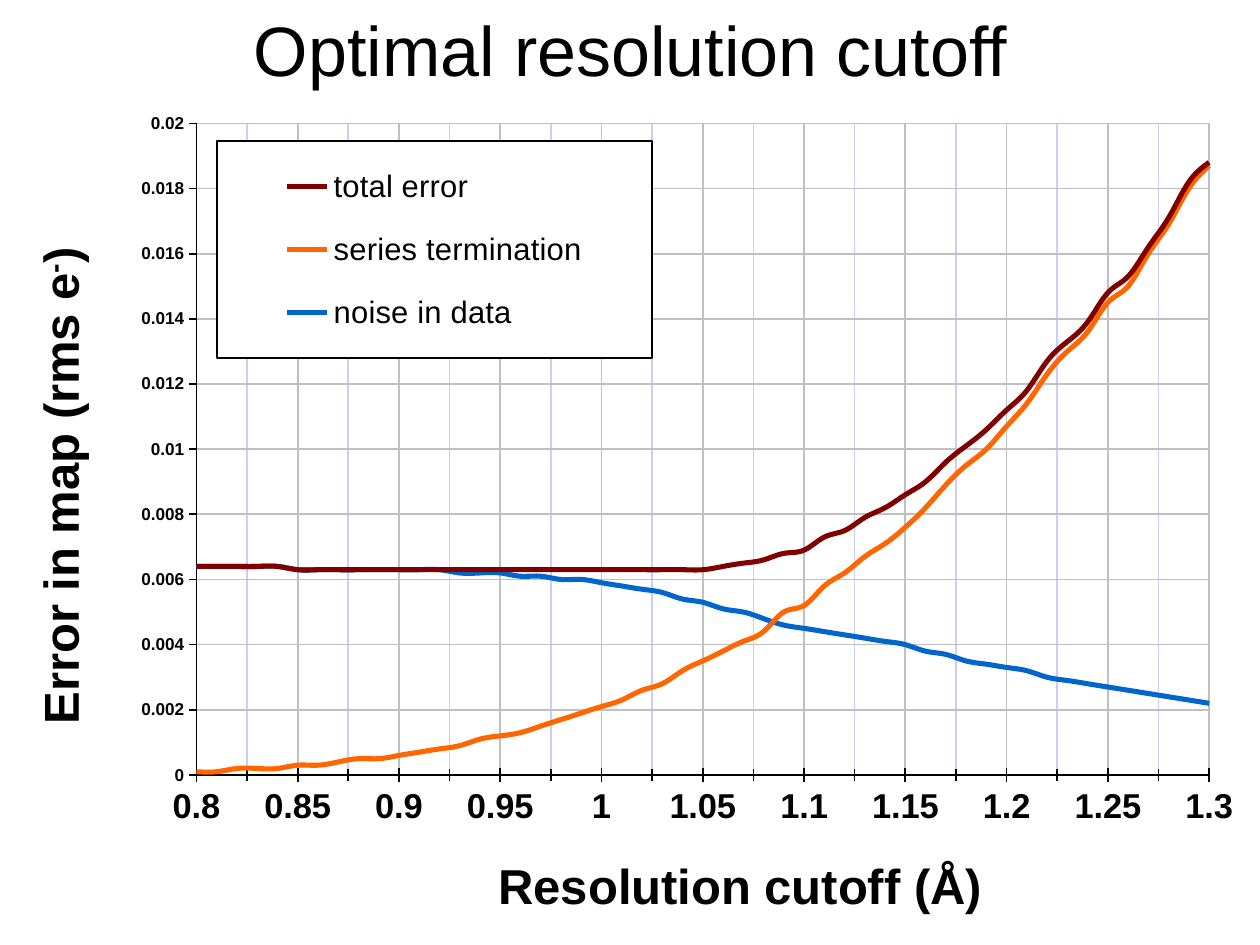
"""Build the slide on the optimal resolution cutoff."""
from lxml.etree import SubElement
from pptx import Presentation
from pptx.chart.data import XyChartData
from pptx.dml.color import RGBColor
from pptx.enum.chart import XL_CHART_TYPE as ChartType, XL_LEGEND_POSITION as LegendPosition
from pptx.enum.chart import XL_TICK_LABEL_POSITION as LabelPosition, XL_TICK_MARK as TickMark
from pptx.enum.text import MSO_ANCHOR as Anchor, PP_ALIGN as Align
from pptx.oxml import parse_xml
from pptx.oxml.ns import nsdecls, qn
from pptx.util import Cm, Pt

FONT = "Arial"
BLACK, WHITE, GRID, MINOR_GRID = "000000", "FFFFFF", "C0C0C0", "CCCCFF"
THIN, THICK = 0.96, 2.88
RESOLUTIONS = [round(0.8 + step / 100, 2) for step in range(51)]
ERRORS_PER_TEN_THOUSAND = {
    "total error": ("800000", [
        64, 64, 64, 64, 64, 63, 63, 63, 63, 63, 63, 63, 63, 63, 63, 63, 63,
        63, 63, 63, 63, 63, 63, 63, 63, 63, 64, 65, 66, 68, 69, 73, 75, 79,
        82, 86, 90, 96, 101, 106, 112, 118, 127, 133, 139, 148, 153, 162, 171, 182, 188]),
    "series termination": ("FF6600", [
        1, 1, 2, 2, 2, 3, 3, 4, 5, 5, 6, 7, 8, 9, 11, 12, 13,
        15, 17, 19, 21, 23, 26, 28, 32, 35, 38, 41, 44, 50, 52, 58, 62, 67,
        71, 76, 82, 89, 95, 100, 107, 114, 123, 130, 136, 145, 150, 160, 169, 180, 187]),
    "noise in data": ("0066CC", [
        64, 64, 64, 64, 64, 63, 63, 63, 63, 63, 63, 63, 63, 62, 62, 62, 61,
        61, 60, 60, 59, 58, 57, 56, 54, 53, 51, 50, 48, 46, 45, 44, 43, 42,
        41, 40, 38, 37, 35, 34, 33, 32, 30, 29, 28, 27, 26, 25, 24, 23, 22]),
}


def color(hex_string):
    return RGBColor.from_string(hex_string)


def style_font(font, size, bold=False):
    font.name, font.size, font.bold = FONT, Pt(size), bold
    font.color.rgb = color(BLACK)


def style_line(line, hex_string, width=THIN):
    line.color.rgb = color(hex_string)
    line.width = Pt(width)


def make_shape_properties(line_color, fill_color=None):
    def solid(hex_string):
        return f'<a:solidFill><a:srgbClr val="{hex_string}"/></a:solidFill>'

    fill = solid(fill_color) if fill_color else ""
    return parse_xml(f"<c:spPr {nsdecls('c', 'a')}>{fill}"
                     f'<a:ln w="{int(Pt(THIN))}">{solid(line_color)}</a:ln></c:spPr>')


def place(parent, index, left, top, width, height, inner=False):
    for old in parent.findall(qn("c:layout")):
        parent.remove(old)
    layout = parse_xml(f"<c:layout {nsdecls('c')}><c:manualLayout/></c:layout>")
    entries = [("layoutTarget", "inner")] if inner else []
    entries += [("xMode", "edge"), ("yMode", "edge"),
                ("x", left), ("y", top), ("w", width), ("h", height)]
    for tag, value in entries:
        SubElement(layout[0], qn(f"c:{tag}")).set("val", str(value))
    parent.insert(index, layout)


def style_axis(axis, low, high, step, size, tick):
    axis.minimum_scale, axis.maximum_scale, axis.major_unit = low, high, step
    axis.major_tick_mark = tick
    axis.tick_label_position = LabelPosition.LOW
    axis.tick_labels.number_format = "General"
    axis.tick_labels.number_format_is_linked = False
    style_font(axis.tick_labels.font, size, bold=True)
    style_line(axis.format.line, BLACK)
    axis.has_major_gridlines = True
    style_line(axis.major_gridlines.format.line, GRID)


def add_minor_grid(axis, step):
    axis.minor_unit = step
    axis.minor_tick_mark = TickMark.CROSS
    axis.has_minor_gridlines = True
    gridlines = axis._element.find(qn("c:minorGridlines"))
    gridlines.append(make_shape_properties(MINOR_GRID))


def style_legend(chart):
    chart.has_legend = True
    legend = chart.legend
    legend.position = LegendPosition.RIGHT
    legend.include_in_layout = False
    style_font(legend.font, 17.7)
    element = legend._element
    place(element, 1, 0.108, 0.066, 0.374, 0.272)
    element.find(qn("c:overlay")).addnext(make_shape_properties(BLACK, WHITE))


def add_error_chart(slide):
    data = XyChartData()
    for name, (_, errors) in ERRORS_PER_TEN_THOUSAND.items():
        series = data.add_series(name)
        for resolution, error in zip(RESOLUTIONS, errors):
            series.add_data_point(resolution, error / 10000)
    chart = slide.shapes.add_chart(ChartType.XY_SCATTER_SMOOTH_NO_MARKERS, Cm(1.85), Cm(1.78),
                                   Cm(23.44), Cm(16.1), data).chart
    chart.has_title = False
    style_font(chart.font, 8.9)
    plot = chart.plots[0]
    plot.vary_by_categories = False
    for series, (hex_string, _) in zip(plot.series, ERRORS_PER_TEN_THOUSAND.values()):
        style_line(series.format.line, hex_string, THICK)
        series._element.find(qn("c:smooth")).set("val", "1")
    style_axis(chart.category_axis, 0.8, 1.3, 0.05, 19.7, TickMark.CROSS)
    add_minor_grid(chart.category_axis, 0.025)
    style_axis(chart.value_axis, 0, 0.02, 0.002, 9.8, TickMark.OUTSIDE)
    style_legend(chart)
    plot_area = chart._chartSpace.find(f"{qn('c:chart')}/{qn('c:plotArea')}")
    place(plot_area, 0, 0.09, 0.044, 0.871, 0.816, inner=True)


def add_label(slide, box, runs, size, bold=False, rotation=0):
    shape = slide.shapes.add_textbox(*(Cm(length) for length in box))
    shape.rotation = rotation
    frame = shape.text_frame
    frame.word_wrap = False
    frame.vertical_anchor = Anchor.TOP
    paragraph = frame.paragraphs[0]
    paragraph.alignment = Align.CENTER
    for text, baseline_percent in runs:
        run = paragraph.add_run()
        run.text = text
        style_font(run.font, size, bold)
        if baseline_percent:
            run.font._element.set("baseline", str(baseline_percent * 1000))


def main():
    presentation = Presentation()
    presentation.slide_width, presentation.slide_height = Cm(25.4), Cm(19.05)
    slide = presentation.slides.add_slide(presentation.slide_layouts[6])
    add_error_chart(slide)
    add_label(slide, (9.73, 17.12, 10.39, 1.45), [("Resolution cutoff (Å)", 0)], 28, bold=True)
    add_label(slide, (-3.99, 9.07, 10.39, 1.45),
              [("Error in map (rms e", 0), ("-", 30), (")", 0)], 28, bold=True, rotation=270)
    add_label(slide, (4.78, 0, 15.85, 1.96), [("Optimal resolution cutoff", 0)], 40)
    presentation.save("out.pptx")


if __name__ == "__main__":
    main()
